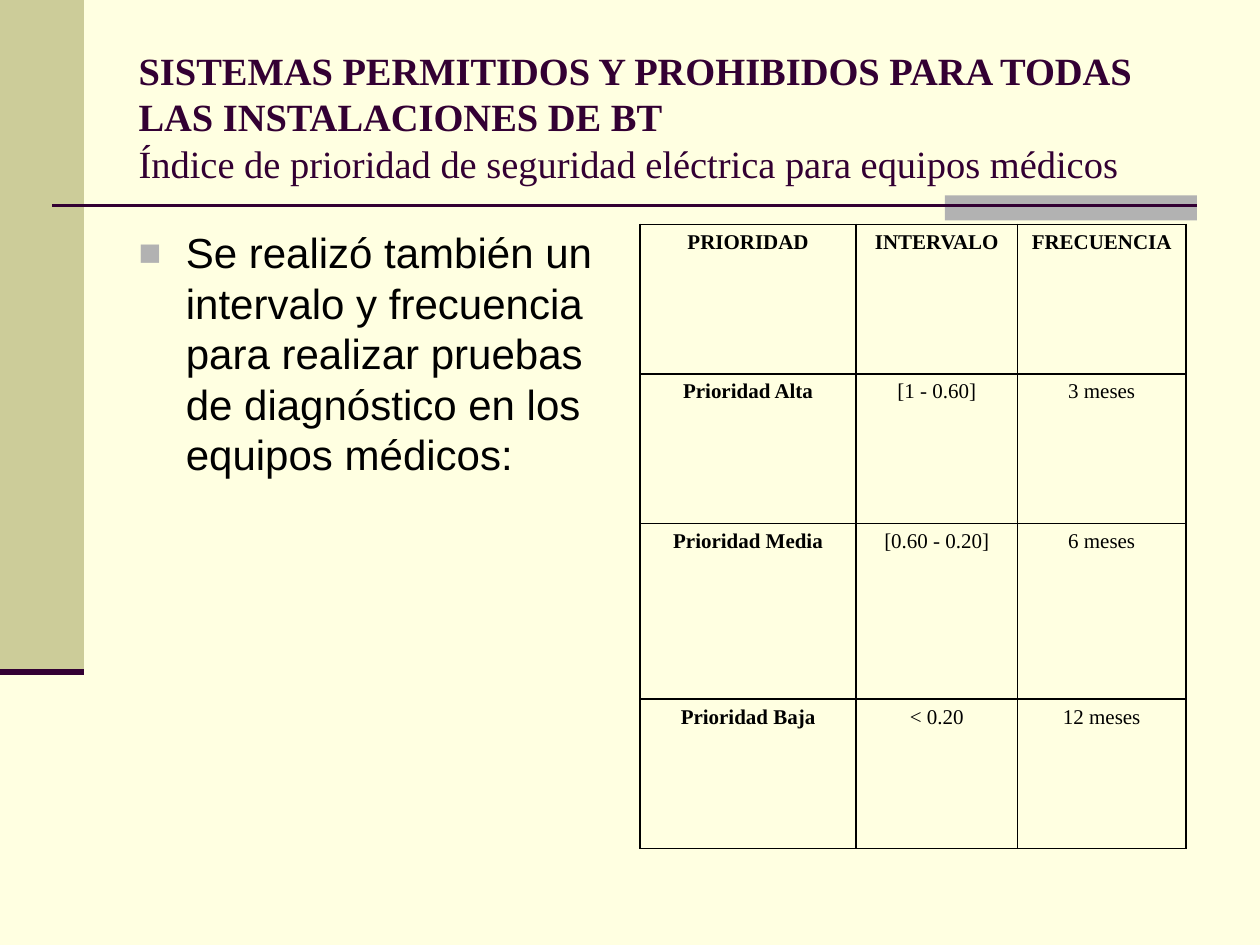
from dataclasses import dataclass

from lxml import etree
from pptx import Presentation
from pptx.dml.color import RGBColor
from pptx.enum import shapes, text
from pptx.oxml import ns, parse_xml
from pptx.util import Pt


@dataclass(frozen=True)
class Theme:
    paper: str = "FFFFE1"
    sand: str = "CCCC99"
    gray: str = "B2B2B2"
    plum: str = "330033"
    ink: str = "000000"
    serif: str = "Times New Roman"
    sans: str = "Arial"
    head: float = 22
    body: float = 24
    cell: float = 12


LOOK = Theme()
ROWS = [
    ("PRIORIDAD", "INTERVALO", "FRECUENCIA"),
    ("Prioridad Alta", "[1 - 0.60]", "3 meses"),
    ("Prioridad Media", "[0.60 - 0.20]", "6 meses"),
    ("Prioridad Baja", "< 0.20", "12 meses"),
]
WIDTHS = (123.4, 92.2, 96.4)
HEIGHTS = (85.5, 85.5, 100.3, 85.5)


def apply(item, form):
    for key, value in form.items():
        setattr(item, key, value)


def place(item, box):
    apply(item, dict(zip(("left", "top", "width", "height"), map(Pt, box))))


def style(run, name, size, color, bold=False):
    apply(run.font, {"name": name, "size": Pt(size), "bold": bold})
    run.font.color.rgb = RGBColor.from_string(color)


def block(slide, box, color):
    rect = slide.shapes.add_shape(shapes.MSO_SHAPE.RECTANGLE, *map(Pt, box))
    rect.shadow.inherit = False
    rect.fill.solid()
    rect.fill.fore_color.rgb = RGBColor.from_string(color)
    rect.line.fill.background()


def rule(slide, left, right, y, width):
    line = slide.shapes.add_connector(
        shapes.MSO_CONNECTOR.STRAIGHT, Pt(left), Pt(y), Pt(right), Pt(y))
    line.line.color.rgb = RGBColor.from_string(LOOK.plum)
    line.line.width = Pt(width)
    etree.SubElement(line._element.spPr, ns.qn("a:effectLst"))


def side(slide, box):
    left, top, width, height = box
    block(slide, box, LOOK.sand)
    rule(slide, left, left + width, top + height, 3.5)


def band(slide, box):
    left, top, width, height = box
    tab = 144
    block(slide, (left + width - tab, top, tab, height), LOOK.gray)
    rule(slide, left, left + width, top + 5.8, 1.5)


def title(slide, box):
    shape = slide.shapes.title
    place(shape, box)
    frame = shape.text_frame
    apply(frame, {"word_wrap": True,
                  "auto_size": text.MSO_AUTO_SIZE.NONE,
                  "vertical_anchor": text.MSO_ANCHOR.MIDDLE})
    para = frame.paragraphs[0]
    para.alignment = text.PP_ALIGN.LEFT
    run = para.add_run()
    run.text = "SISTEMAS PERMITIDOS Y PROHIBIDOS PARA TODAS LAS INSTALACIONES DE BT "
    style(run, LOOK.serif, LOOK.head, LOOK.plum, True)
    para.add_line_break()
    run = para.add_run()
    run.text = "Índice de prioridad de seguridad eléctrica para equipos médicos"
    style(run, LOOK.serif, LOOK.head, LOOK.plum)


def body(slide, box):
    shape = slide.placeholders[1]
    place(shape, box)
    frame = shape.text_frame
    apply(frame, {"word_wrap": True,
                  "auto_size": text.MSO_AUTO_SIZE.NONE,
                  "vertical_anchor": text.MSO_ANCHOR.TOP})
    para = frame.paragraphs[0]
    run = para.add_run()
    run.text = ("Se realizó también un intervalo y frecuencia para realizar "
                "pruebas de diagnóstico en los equipos médicos:")
    style(run, LOOK.sans, LOOK.body, LOOK.ink)
    props = para._p.get_or_add_pPr()
    props.set("marL", str(Pt(27)))
    props.set("indent", str(Pt(-27)))
    color = etree.SubElement(props, ns.qn("a:buClr"))
    etree.SubElement(color, ns.qn("a:srgbClr"), val=LOOK.gray)
    etree.SubElement(props, ns.qn("a:buSzPct"), val="90000")
    etree.SubElement(props, ns.qn("a:buFont"), typeface=LOOK.sans)
    etree.SubElement(props, ns.qn("a:buChar"), char="■")


def border(cell):
    props = cell._tc.get_or_add_tcPr()
    for edge in "LRTB":
        props.append(parse_xml(
            f'<a:ln{edge} {ns.nsdecls("a")} w="{Pt(1)}"><a:solidFill>'
            f'<a:srgbClr val="{LOOK.ink}"/></a:solidFill></a:ln{edge}>'))


def table(slide, left, top):
    box = (left, top, sum(WIDTHS), sum(HEIGHTS))
    grid = slide.shapes.add_table(len(ROWS), len(WIDTHS), *map(Pt, box)).table
    apply(grid, {"first_row": False, "horz_banding": False})
    for col, width in zip(grid.columns, WIDTHS):
        col.width = Pt(width)
    for row, height in zip(grid.rows, HEIGHTS):
        row.height = Pt(height)
    for i, words in enumerate(ROWS):
        for j, word in enumerate(words):
            cell = grid.cell(i, j)
            border(cell)
            cell.fill.background()
            para = cell.text_frame.paragraphs[0]
            para.alignment = text.PP_ALIGN.CENTER
            run = para.add_run()
            run.text = word
            style(run, LOOK.serif, LOOK.cell, LOOK.ink, i == 0 or j == 0)


def main():
    deck = Presentation()
    apply(deck, {"slide_width": Pt(720), "slide_height": Pt(540)})
    slide = deck.slides.add_slide(deck.slide_layouts[1])
    fill = slide.background.fill
    fill.solid()
    fill.fore_color.rgb = RGBColor.from_string(LOOK.paper)
    side(slide, (0, 0, 48, 384))
    band(slide, (30, 111.6, 654, 14.4))
    title(slide, (72, 21.6, 612, 90))
    body(slide, (72, 126, 300, 356.4))
    table(slide, 365.8, 128.2)
    deck.save("out.pptx")


if __name__ == "__main__":
    main()
